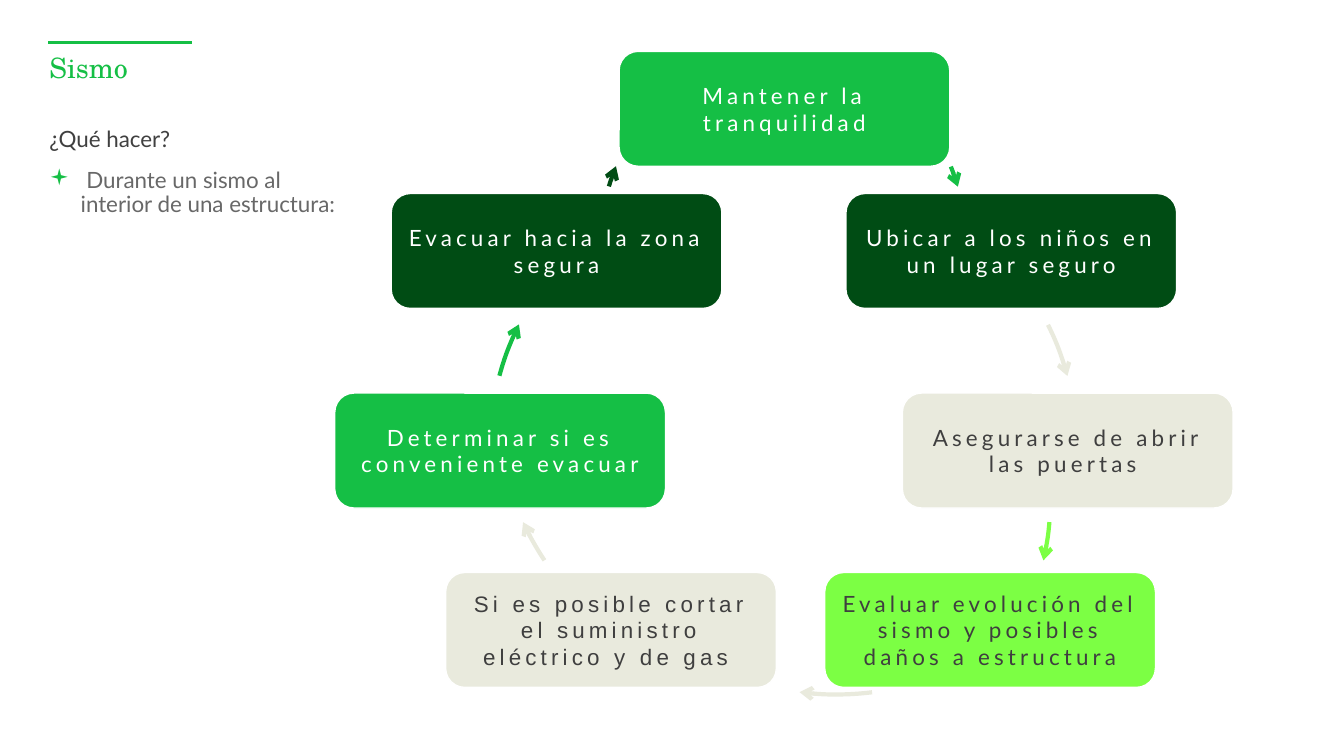
import math

from lxml import etree
from pptx import Presentation
from pptx.dml.color import RGBColor
from pptx.enum.shapes import MSO_CONNECTOR, MSO_SHAPE
from pptx.enum.text import MSO_ANCHOR, PP_ALIGN
from pptx.oxml.ns import qn
from pptx.util import Inches, Pt

STRAIGHT = MSO_CONNECTOR.STRAIGHT
ROUNDED = MSO_SHAPE.ROUNDED_RECTANGLE
ARC = MSO_SHAPE.ARC
MIDDLE = MSO_ANCHOR.MIDDLE
CENTER = PP_ALIGN.CENTER

GREEN = RGBColor(0x15, 0xBF, 0x45)
DARK_GREEN = RGBColor(0x00, 0x4C, 0x14)
LIME = RGBColor(0x7C, 0xFF, 0x44)
CREAM = RGBColor(0xE9, 0xEA, 0xDD)
WHITE = RGBColor(0xFF, 0xFF, 0xFF)
CHARCOAL = RGBColor(0x3F, 0x3F, 0x3F)
HEADING_GRAY = RGBColor(0x40, 0x40, 0x40)
BODY_GRAY = RGBColor(0x68, 0x68, 0x68)

BODY_FONT = "Lato"
TITLE_FONT = "TeX Gyre Schola"
STEP_WIDTH, STEP_HEIGHT = 3.28, 1.14
RING = 5.77

STEPS = [
    ("Mantener la tranquilidad", 6.14, 0.51, GREEN, WHITE, BODY_FONT),
    ("Ubicar a los niños en un lugar seguro", 8.39, 1.92, DARK_GREEN, WHITE, BODY_FONT),
    ("Asegurarse de abrir las puertas ", 8.95, 3.9, CREAM, CHARCOAL, BODY_FONT),
    ("Evaluar evolución del sismo y posibles daños a estructura",
     8.18, 5.68, LIME, CHARCOAL, BODY_FONT),
    ("Si es posible cortar el suministro eléctrico y de gas ",
     4.42, 5.68, CREAM, CHARCOAL, "Arial"),
    ("Determinar si es conveniente evacuar", 3.32, 3.9, GREEN, WHITE, BODY_FONT),
    ("Evacuar hacia la zona segura", 3.88, 1.92, DARK_GREEN, WHITE, BODY_FONT),
]

ARROWS = [
    (GREEN, 3.86, -0.18, (9.44, 1.65), (9.51, 1.85)),
    (CREAM, 4.92, 1.61, (10.4, 3.22), (10.59, 3.73)),
    (LIME, 4.65, 2.04, (10.41, 5.18), (10.35, 5.56)),
    (CREAM, 5.41, 1.12, (8.65, 6.87), (7.93, 6.87)),
    (CREAM, 4.92, 1.08, (5.4, 5.56), (5.19, 5.18)),
    (GREEN, 4.85, 1.61, (4.96, 3.73), (5.15, 3.22)),
    (DARK_GREEN, 5.91, -0.18, (6.04, 1.85), (6.11, 1.65)),
]


def apply(target, values):
    """Set each named attribute of the target."""
    for name, value in values.items():
        setattr(target, name, value)


def write(frame, text, font, size, color, side=0, edge=0):
    """Fill a text frame with one run and return its paragraph and run."""
    apply(frame, {"word_wrap": True,
                  "margin_left": Inches(side), "margin_right": Inches(side),
                  "margin_top": Inches(edge), "margin_bottom": Inches(edge)})
    paragraph = frame.paragraphs[0]
    run = paragraph.add_run()
    run.text = text
    apply(run.font, {"name": font, "size": Pt(size)})
    run.font.color.rgb = color
    return paragraph, run


def add_text(slide, box, text, font, size, color):
    """Add a left-aligned text box and return its paragraph."""
    holder = slide.shapes.add_textbox(*map(Inches, box))
    paragraph, _ = write(holder.text_frame, text, font, size, color)
    paragraph.line_spacing = 0.9
    return paragraph


def add_bullet(paragraph):
    """Give a paragraph a green square bullet with a hanging indent."""
    properties = paragraph._p.get_or_add_pPr()
    indent = Inches(0.31)
    properties.set("marL", str(indent))
    properties.set("indent", str(-indent))
    tint = etree.SubElement(properties, qn("a:buClr"))
    etree.SubElement(tint, qn("a:srgbClr"), val=str(GREEN))
    etree.SubElement(properties, qn("a:buFont"), typeface="Wingdings")
    etree.SubElement(properties, qn("a:buChar"), char="▪")


def add_rule(slide):
    """Add the short green line above the title."""
    rule = slide.shapes.add_connector(
        STRAIGHT, Inches(0.48), Inches(0.42), Inches(1.9), Inches(0.42))
    rule.line.color.rgb = GREEN
    rule.line.width = Pt(1.75)
    etree.SubElement(rule._element.spPr, qn("a:effectLst"))


def add_step(slide, text, left, top, fill, color, font):
    """Add one rounded step of the cycle."""
    step = slide.shapes.add_shape(
        ROUNDED, *map(Inches, (left, top, STEP_WIDTH, STEP_HEIGHT)))
    step.shadow.inherit = False
    step.fill.solid()
    step.fill.fore_color.rgb = fill
    step.line.color.rgb = WHITE
    step.line.width = Pt(1)
    step.text_frame.vertical_anchor = MIDDLE
    paragraph, run = write(step.text_frame, text, font, 16, color, 0.06, 0.06)
    paragraph.alignment = CENTER
    run._r.get_or_add_rPr().set("spc", "300")


def add_arrow(slide, color, left, top, start, end):
    """Add a clockwise arc arrow between two steps."""
    arrow = slide.shapes.add_shape(ARC, *map(Inches, (left, top, RING, RING)))
    for index, (x, y) in enumerate((start, end)):
        angle = math.atan2(y - top - RING / 2, x - left - RING / 2)
        arrow.adjustments[index] = math.degrees(angle) % 360 * 0.6
    arrow.shadow.inherit = False
    arrow.fill.background()
    arrow.line.color.rgb = color
    arrow.line.width = Pt(3)
    etree.SubElement(arrow.line._get_or_add_ln(), qn("a:tailEnd"), type="arrow")


def main():
    """Build the earthquake slide."""
    deck = Presentation()
    apply(deck, {"slide_width": Inches(13.33), "slide_height": Inches(7.5)})
    slide = deck.slides.add_slide(deck.slide_layouts[6])
    add_rule(slide)
    add_text(slide, (0.49, 0.54, 10.79, 0.57), "Sismo", TITLE_FONT, 20, GREEN)
    add_text(slide, (0.49, 1.27, 10.79, 0.39), "¿Qué hacer?",
             BODY_FONT, 16, HEADING_GRAY)
    situation = add_text(slide, (0.49, 1.68, 2.85, 4.52),
                         " Durante un sismo al interior de una estructura:",
                         BODY_FONT, 16, BODY_GRAY)
    add_bullet(situation)
    for step, arrow in zip(STEPS, ARROWS):
        add_step(slide, *step)
        add_arrow(slide, *arrow)
    deck.save("out.pptx")


if __name__ == "__main__":
    main()
